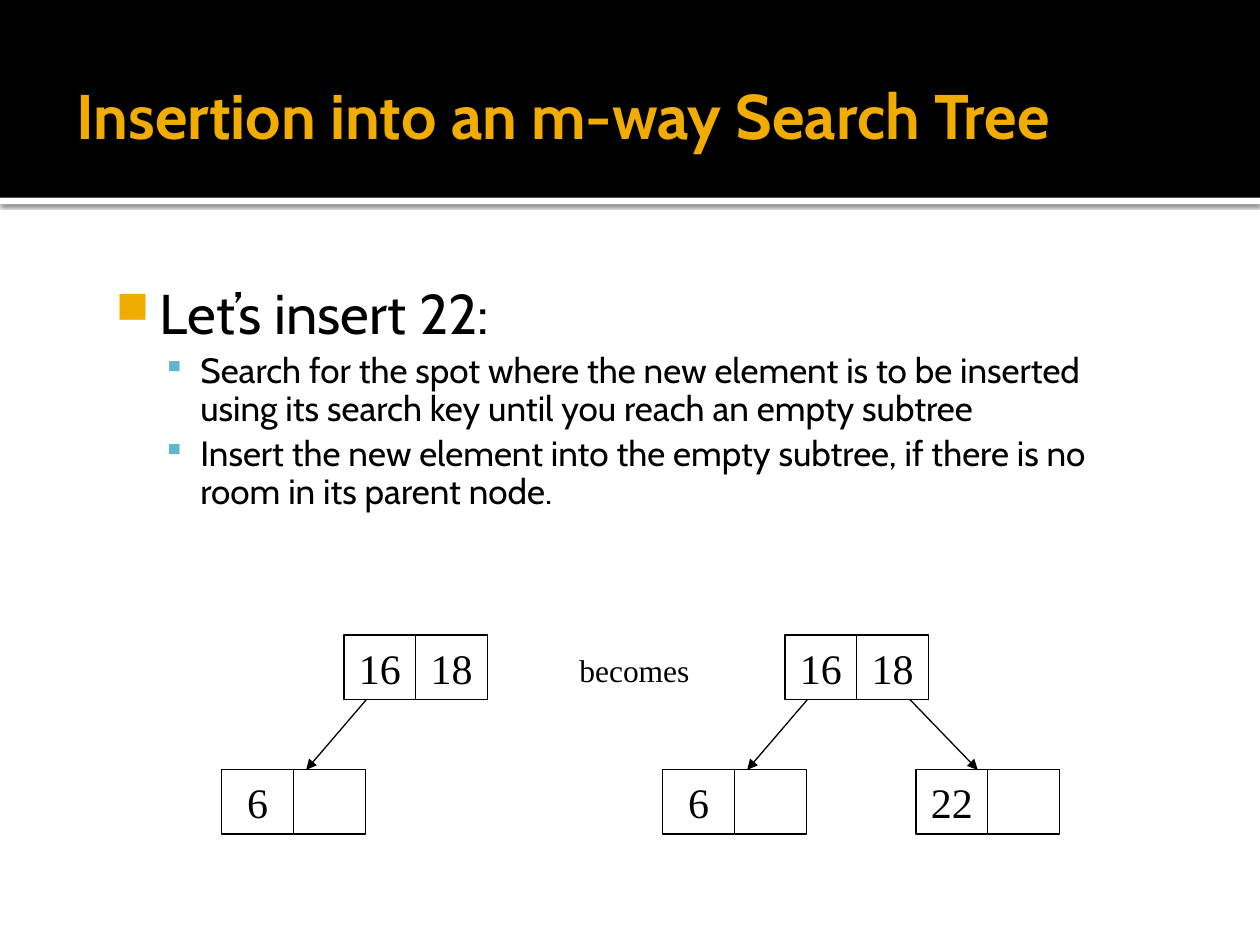
from lxml.etree import SubElement
from pptx import Presentation
from pptx.dml.color import RGBColor
from pptx.enum.shapes import MSO_CONNECTOR as CONN, MSO_SHAPE as SHAPE
from pptx.enum.text import MSO_ANCHOR as ANCHOR, PP_ALIGN as ALIGN
from pptx.oxml.ns import qn
from pptx.util import Inches, Pt

COLORS = {"black": "000000", "white": "FFFFFF", "gold": "F0AD00", "blue": "60B5CC"}
SANS, SERIF = "Cabin", "Times New Roman"
COLS, ROWS = 100, 75
CELL_W, CELL_H = 5.7, 5.1
ROOT_Y, LEAF_Y = 50.4, 61.1


def rgb(name):
    return RGBColor.from_string(COLORS[name])


def add_xml(parent, tag, **attrs):
    return SubElement(parent, qn(tag), attrs)


class Deck:
    """Draws on one slide; lengths are columns and rows of the grid."""

    def __init__(self):
        self.prs = Presentation()
        self.prs.slide_width, self.prs.slide_height = Inches(10), Inches(7.5)
        self.col = self.prs.slide_width / COLS
        self.row = self.prs.slide_height / ROWS
        self.slide = self.prs.slides.add_slide(self.prs.slide_layouts[6])

    def place(self, *lengths):
        """Turn alternating columns and rows into slide units."""
        return [round(n * (self.row if i % 2 else self.col)) for i, n in enumerate(lengths)]

    def rect(self, x, y, w, h, fill=None, line=None):
        sp = self.slide.shapes.add_shape(SHAPE.RECTANGLE, *self.place(x, y, w, h))
        sp.shadow.inherit = False
        if fill:
            sp.fill.solid()
            sp.fill.fore_color.rgb = rgb(fill)
        else:
            sp.fill.background()
        if line:
            sp.line.color.rgb = rgb(line)
            sp.line.width = Pt(0.75)
        else:
            sp.line.fill.background()
        return sp

    def drop_shadow(self, sp):
        effects = sp._element.spPr.find(qn("a:effectLst"))
        shadow = add_xml(effects, "a:outerShdw", blurRad=str(Pt(2.5)), dist=str(Pt(0.8)),
                         dir="5400000", algn="tl", rotWithShape="0")
        color = add_xml(shadow, "a:srgbClr", val=COLORS["black"])
        add_xml(color, "a:alpha", val="60000")

    def add_text(self, p, text, font, size, color="black", bold=False, **layout):
        for name, value in layout.items():
            setattr(p, name, value)
        r = p.add_run()
        r.text = text
        for name, value in {"name": font, "size": Pt(size), "bold": bold}.items():
            setattr(r.font, name, value)
        r.font.color.rgb = rgb(color)

    def text_box(self, x, y, w, h, insets=(0.1, 0.05, 0.1, 0.05), wrap=True,
                 anchor=ANCHOR.TOP):
        tf = self.slide.shapes.add_textbox(*self.place(x, y, w, h)).text_frame
        tf.word_wrap, tf.vertical_anchor = wrap, anchor
        for side, inset in zip(("left", "top", "right", "bottom"), insets):
            setattr(tf, f"margin_{side}", Inches(inset))
        return tf

    def bullet(self, p, char, color, percent, margin, indent):
        pPr = p._p.get_or_add_pPr()
        pPr.set("marL", str(Inches(margin)))
        pPr.set("indent", str(Inches(indent)))
        add_xml(add_xml(pPr, "a:buClr"), "a:srgbClr", val=COLORS[color])
        add_xml(pPr, "a:buSzPct", val=str(percent * 1000))
        add_xml(pPr, "a:buChar", char=char)

    def node(self, x, y, *keys):
        for i, key in enumerate(keys):
            sp = self.rect(x + i * CELL_W, y, CELL_W, CELL_H, line="black")
            if key:
                tf = sp.text_frame
                tf.vertical_anchor = ANCHOR.MIDDLE
                self.add_text(tf.paragraphs[0], key, SERIF, 24, alignment=ALIGN.CENTER)

    def arrow(self, x1, x2):
        """Link a root node's bottom edge to a leaf's top edge."""
        ends = self.place(x1, ROOT_Y + CELL_H, x2, LEAF_Y)
        sp = self.slide.shapes.add_connector(CONN.STRAIGHT, *ends)
        sp.line.color.rgb = rgb("black")
        sp.line.width = Pt(0.75)
        spPr = sp._element.spPr
        add_xml(spPr.find(qn("a:ln")), "a:tailEnd", type="triangle")
        add_xml(spPr, "a:effectLst")

    def tree(self, x):
        """Draw the root 16 | 18 and its left child, starting at column x."""
        self.node(x + 9.7, ROOT_Y, "16", "18")
        self.node(x, LEAF_Y, "6", "")
        self.arrow(x + 11.5, x + 6.7)


def main():
    deck = Deck()
    deck.drop_shadow(deck.rect(0, 15.7, COLS, 0.5, fill="white"))
    deck.rect(0, 0, COLS, 15.7, fill="black")

    title = deck.text_box(5.1, 2.8, 89.7, 12.5, (0.1, 0.05, 0.05, 0.05), anchor=ANCHOR.MIDDLE)
    deck.add_text(title.paragraphs[0], "Insertion into an m-way Search Tree",
                  SANS, 36, "gold", True)

    body = deck.text_box(7.3, 21.7, 85.5, 21.6, (0.06, 0.1, 0.1, 0.05))
    p = body.paragraphs[0]
    deck.add_text(p, "Let’s insert 22:", SANS, 32, line_spacing=0.9)
    deck.bullet(p, "■", "gold", 80, 0.48, -0.35)
    for step in (
        "Search for the spot where the new element is to be inserted "
        "using its search key until you reach an empty subtree",
        "Insert the new element into the empty subtree, if there is no "
        "room in its parent node.",
    ):
        p = body.add_paragraph()
        deck.add_text(p, step, SANS, 20, level=1, line_spacing=0.9, space_before=Pt(4))
        deck.bullet(p, "▪", "blue", 90, 0.8, -0.3)

    label = deck.text_box(45, 51.2, 10.8, 4, wrap=False)
    deck.add_text(label.paragraphs[0], "becomes", SERIF, 18)

    before, after = 17.6, 52.6
    deck.tree(before)
    deck.tree(after)
    deck.node(after + 20.1, LEAF_Y, "22", "")
    deck.arrow(after + 19.6, after + 25)

    deck.prs.save("out.pptx")


if __name__ == "__main__":
    main()
